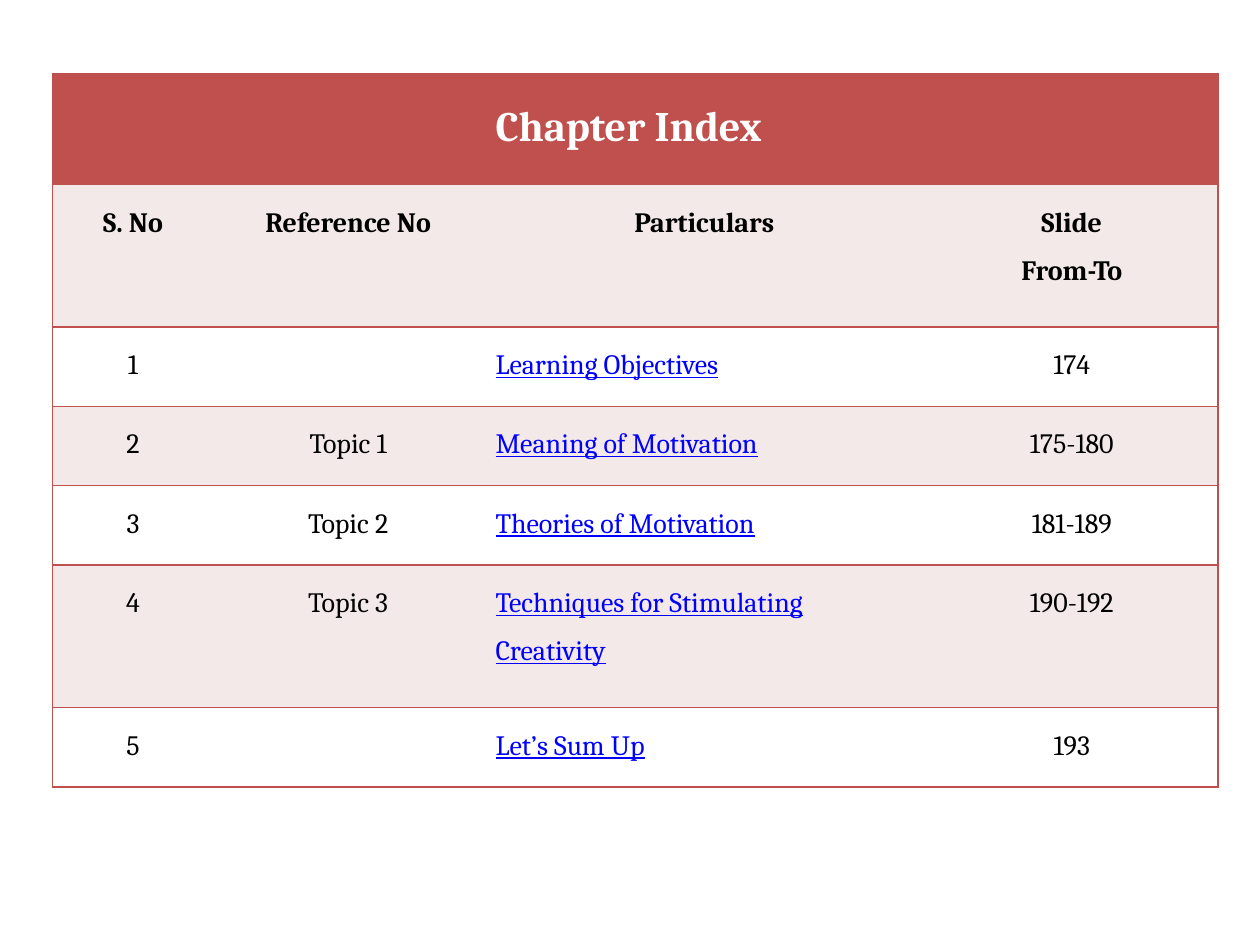
"""Build the chapter index slide."""
from dataclasses import dataclass

from lxml import etree
from pptx import Presentation
from pptx import util as u
from pptx.dml.color import RGBColor
from pptx.enum import text
from pptx.oxml import ns

LEFT, CENTER, JUSTIFY = text.PP_ALIGN.LEFT, text.PP_ALIGN.CENTER, text.PP_ALIGN.JUSTIFY


@dataclass(frozen=True)
class Theme:
    font: str = "Cambria"
    title_size: float = 24
    body_size: float = 16
    line_spacing: float = 1.5
    border_width: float = 1
    accent: str = "C0504D"
    band: str = "F4E9E9"
    plain: str = "FFFFFF"
    ink: str = "000000"
    topic: str = "0000FF"
    table_style: str = "{2D5ABB26-0587-4C30-8999-92F81FD0307C}"


class IndexSlide:
    def __init__(self, slide, theme):
        self.slide = slide
        self.theme = theme

    def table(self, left, top, widths, heights):
        frame = self.slide.shapes.add_table(
            len(heights), len(widths), u.Pt(left), u.Pt(top),
            u.Pt(sum(widths)), u.Pt(sum(heights)))
        grid = frame.table
        grid.horz_banding = False
        frame._element.find(".//" + ns.qn("a:tableStyleId")).text = self.theme.table_style
        for column, width in zip(grid.columns, widths):
            column.width = u.Pt(width)
        for row, height in zip(grid.rows, heights):
            row.height = u.Pt(height)
        return grid

    def border(self, cell, sides):
        properties = cell._tc.get_or_add_tcPr()
        for side in sides:
            line = etree.SubElement(properties, ns.qn(f"a:ln{side}"),
                                    w=str(u.Pt(self.theme.border_width)))
            fill = etree.SubElement(line, ns.qn("a:solidFill"))
            etree.SubElement(fill, ns.qn("a:srgbClr"), val=self.theme.accent)

    def fill(self, cell, color):
        cell.fill.solid()
        cell.fill.fore_color.rgb = RGBColor.from_string(color)

    def label(self, cell, words, size, color, align, bold=False, underline=False):
        cell.text = words
        for paragraph in cell.text_frame.paragraphs:
            paragraph.alignment = align
            paragraph.line_spacing = self.theme.line_spacing
            font = paragraph.font
            font.name, font.size = self.theme.font, u.Pt(size)
            font.bold, font.underline = bold, underline
            font.color.rgb = RGBColor.from_string(color)


def main():
    theme = Theme()
    deck = Presentation()
    deck.slide_width, deck.slide_height = u.Pt(720), u.Pt(540)
    page = IndexSlide(deck.slides.add_slide(deck.slide_layouts[6]), theme)

    entries = [
        ("", "", "Chapter Index", ""),
        ("S. No", "Reference No", "Particulars", "Slide\nFrom-To"),
        ("1", "", "Learning Objectives", "174"),
        ("2", "Topic 1", "Meaning of Motivation", "175-180"),
        ("3", "Topic 2", "Theories of Motivation", "181-189"),
        ("4", "Topic 3", "Techniques for Stimulating Creativity", "190-192"),
        ("5", "", "Let’s Sum Up", "193"),
    ]
    single, double = 45.4, 81.4
    index = page.table(30, 42, [92, 154, 253, 167],
                       [63.4, double, single, single, single, double, single])
    particulars, last = 2, 3

    for r, entry in enumerate(entries):
        background = theme.accent if r == 0 else theme.band if r % 2 else theme.plain
        for c, words in enumerate(entry):
            cell = index.cell(r, c)
            page.border(cell, ("L" if c == 0 else "") + ("R" if c == last else "") + "TB")
            page.fill(cell, background)
            if not words:
                continue
            if r == 0:
                page.label(cell, words, theme.title_size, theme.plain, JUSTIFY, bold=True)
            elif r > 1 and c == particulars:
                page.label(cell, words, theme.body_size, theme.topic, LEFT, underline=True)
            else:
                page.label(cell, words, theme.body_size, theme.ink, CENTER, bold=r == 1)

    deck.save("out.pptx")


if __name__ == "__main__":
    main()
